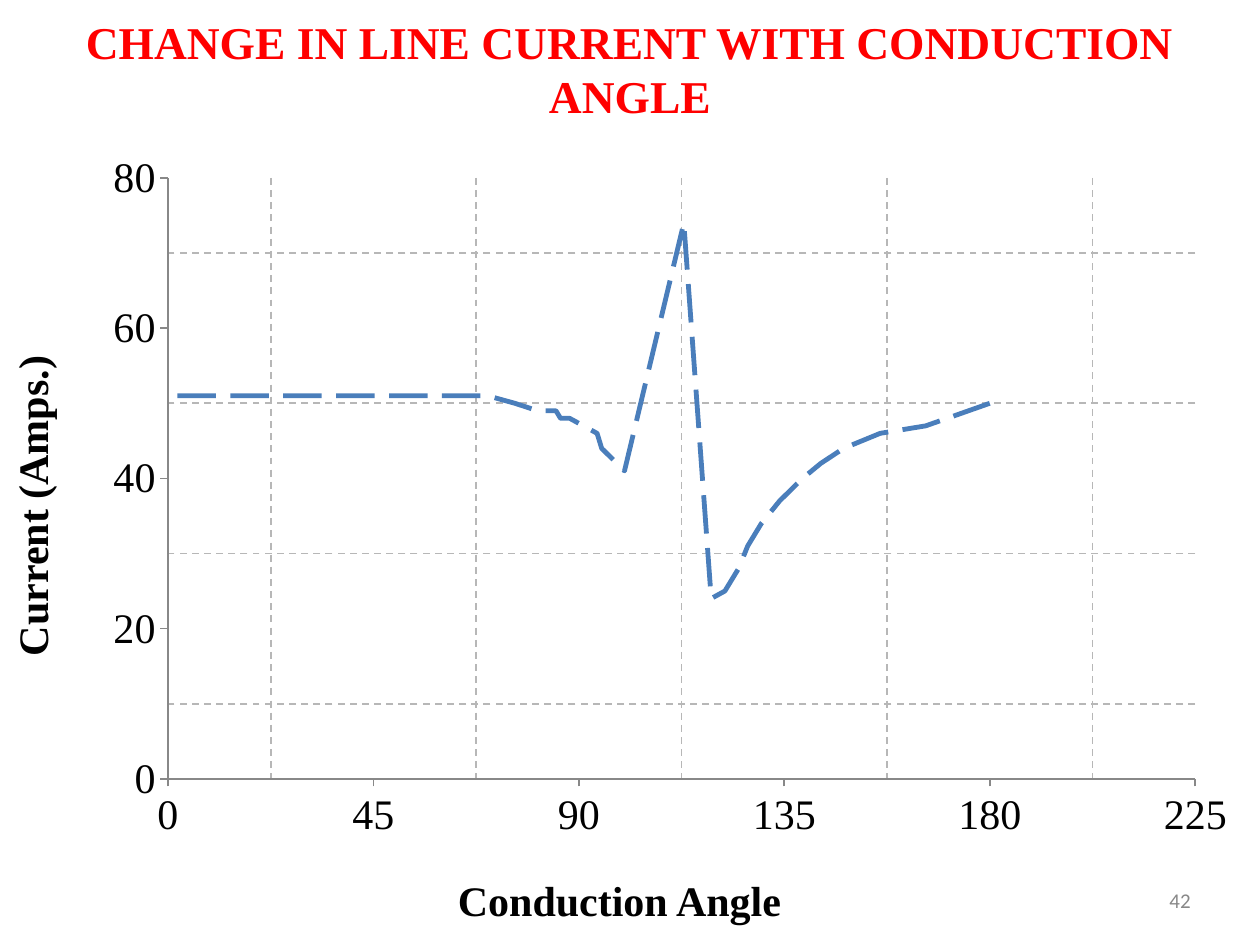
from dataclasses import dataclass

from lxml import etree
from pptx import Presentation
from pptx import util as u
from pptx.chart import data
from pptx.dml.color import RGBColor
from pptx.enum import chart as ch, dml, text
from pptx.oxml import ns

Pt = u.Pt


@dataclass(frozen=True)
class Theme:
    serif: str = "Times New Roman"
    sans: str = "Calibri"
    heading: str = "FF0000"
    ink: str = "000000"
    muted: str = "888888"
    grid: str = "B7B7B7"
    curve: str = "4A7EBB"
    heading_size: float = 26
    label_size: float = 24
    number_size: float = 12
    chart_size: float = 10


THEME = Theme()

LINE_CURRENT = [
    (180, 50), (166, 47), (156, 46), (148, 44), (143, 42), (139, 40),
    (134, 37), (130, 34), (127, 31), (125, 28), (122, 25), (119, 24),
    (113, 74), (100, 41), (95, 44), (94, 46), (91, 47), (88, 48),
    (86, 48), (85, 49), (81, 49), (76, 50), (70, 51), (65, 51),
    (59, 51), (53, 51), (48, 51), (40, 51), (32, 51), (22, 51), (0, 51),
]


def style_font(font, size, color, face=THEME.serif, bold=False):
    font.name = face
    font.size = Pt(size)
    font.bold = bold
    font.color.rgb = RGBColor.from_string(color)


def style_line(line, color, width, dash=None):
    line.color.rgb = RGBColor.from_string(color)
    line.width = Pt(width)
    if dash:
        line.dash_style = dash


def place(shape, left, top, width, height):
    shape.left, shape.top = Pt(left), Pt(top)
    shape.width, shape.height = Pt(width), Pt(height)


def write(shape, words, size, color, align=text.PP_ALIGN.LEFT,
          anchor=text.MSO_ANCHOR.TOP, wrap=True, **font):
    frame = shape.text_frame
    frame.word_wrap = wrap
    frame.auto_size = text.MSO_AUTO_SIZE.NONE
    frame.vertical_anchor = anchor
    frame.margin_left = frame.margin_right = Pt(3.6)
    frame.margin_top = frame.margin_bottom = Pt(3.6)
    paragraph = frame.paragraphs[0]
    paragraph.alignment = align
    run = paragraph.add_run()
    run.text = words
    style_font(run.font, size, color, **font)


def add_heading(slide, words):
    heading = slide.shapes.title
    place(heading, 0, 0, 720, 78)
    write(heading, words, THEME.heading_size, THEME.heading,
          text.PP_ALIGN.CENTER, text.MSO_ANCHOR.MIDDLE, bold=True)


def add_label(slide, words, box, rotation=0):
    label = slide.shapes.add_textbox(*map(Pt, box))
    label.rotation = rotation
    write(label, words, THEME.label_size, THEME.ink, bold=True)


def add_page_number(slide, number):
    page_number = slide.shapes.add_textbox(Pt(663), Pt(504), Pt(21), Pt(21))
    write(page_number, number, THEME.number_size, THEME.muted,
          text.PP_ALIGN.RIGHT, text.MSO_ANCHOR.MIDDLE, wrap=False,
          face=THEME.sans)


def use_dashed_minor_gridlines(axis, axis_xml):
    axis.has_minor_gridlines = True
    style_line(axis.major_gridlines.format.line, THEME.grid, 1,
               dml.MSO_LINE.DASH)
    major = axis_xml.find(ns.qn("c:majorGridlines"))
    minor = axis_xml.find(ns.qn("c:minorGridlines"))
    minor.append(major.find(ns.qn("c:spPr")))
    axis.has_major_gridlines = False


def style_axis(axis, axis_xml, maximum, step):
    axis.has_major_gridlines = True
    use_dashed_minor_gridlines(axis, axis_xml)
    axis.minimum_scale, axis.maximum_scale = 0, maximum
    axis.major_unit, axis.minor_unit = step, step / 2
    axis.major_tick_mark = ch.XL_TICK_MARK.OUTSIDE
    axis.minor_tick_mark = ch.XL_TICK_MARK.NONE
    axis.tick_labels.number_format = "General"
    axis.tick_labels.number_format_is_linked = False
    style_font(axis.tick_labels.font, THEME.label_size, THEME.ink)
    style_line(axis.format.line, THEME.muted, 1)


def fix_plot_area(plot_area, **fractions):
    for old in plot_area.findall(ns.qn("c:layout")):
        plot_area.remove(old)
    layout = etree.Element(ns.qn("c:layout"))
    manual = etree.SubElement(layout, ns.qn("c:manualLayout"))
    settings = {"layoutTarget": "inner", "xMode": "edge", "yMode": "edge",
                **fractions}
    for tag, value in settings.items():
        etree.SubElement(manual, ns.qn("c:" + tag)).set("val", str(value))
    plot_area.insert(0, layout)


def add_current_chart(slide):
    readings = data.XyChartData()
    series = readings.add_series("Series 1")
    for angle, current in LINE_CURRENT:
        series.add_data_point(angle, current)
    chart = slide.shapes.add_chart(
        ch.XL_CHART_TYPE.XY_SCATTER_LINES_NO_MARKERS,
        Pt(49.7), Pt(75.6), Pt(651.6), Pt(414.7), readings).chart
    chart.has_title = False
    chart.has_legend = False
    style_font(chart.font, THEME.chart_size, THEME.ink, face=THEME.sans)
    plot_area = chart.element.find(".//" + ns.qn("c:plotArea"))
    angle_xml, current_xml = plot_area.findall(ns.qn("c:valAx"))
    style_axis(chart.category_axis, angle_xml, 225, 45)
    style_axis(chart.value_axis, current_xml, 80, 20)
    fix_plot_area(plot_area, x=0.071, y=0.063, w=0.901, h=0.828)
    plot = chart.plots[0]
    plot.vary_by_categories = False
    curve = plot.series[0]
    curve.smooth = False
    curve.marker.style = ch.XL_MARKER_STYLE.NONE
    style_line(curve.format.line, THEME.curve, 2.75, dml.MSO_LINE.LONG_DASH)


def main():
    deck = Presentation()
    deck.slide_width, deck.slide_height = Pt(720), Pt(540)
    slide = deck.slides.add_slide(deck.slide_layouts[5])
    add_heading(slide, "CHANGE IN LINE CURRENT WITH CONDUCTION ANGLE")
    add_page_number(slide, "42")
    add_current_chart(slide)
    add_label(slide, "Current (Amps.)", (-75, 261.5, 192, 42), rotation=270)
    add_label(slide, "Conduction Angle", (258, 496, 234, 33))
    deck.save("out.pptx")


if __name__ == "__main__":
    main()
